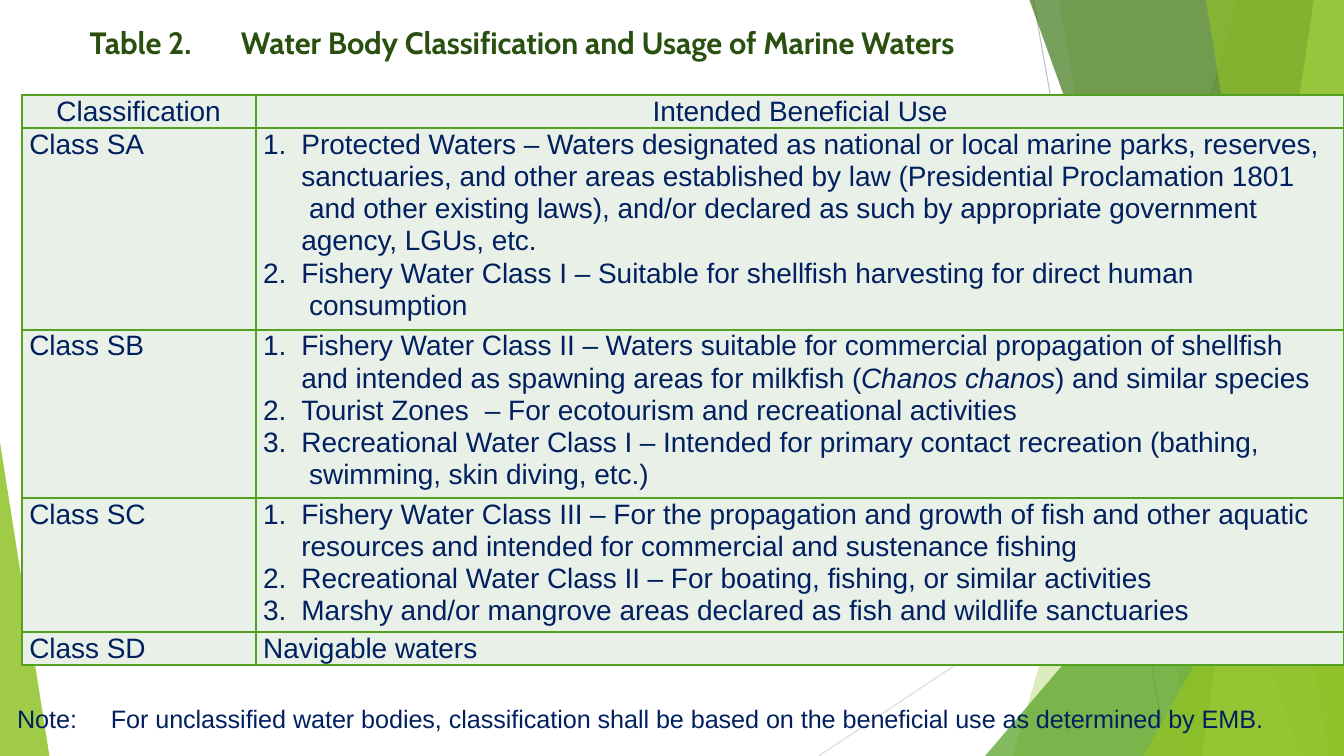
"""Build the slide on classification and usage of marine waters."""
from dataclasses import dataclass

from lxml import etree
from pptx import Presentation
from pptx.dml.color import RGBColor
from pptx.enum.shapes import MSO_CONNECTOR
from pptx.enum.text import PP_ALIGN
from pptx.oxml.ns import qn
from pptx.util import Inches, Pt

STRAIGHT = MSO_CONNECTOR.STRAIGHT
CENTER = PP_ALIGN.CENTER
WIDTH, HEIGHT = 13.33, 7.5


@dataclass(frozen=True)
class Theme:
    body: str = "002060"
    title: str = "2A5010"
    grid: str = "54A021"
    cell: str = "E9F0E8"
    body_font: str = "Arial"
    title_font: str = "Cabin"
    title_size: int = 22
    table_size: int = 20
    note_size: int = 18
    leading: int = 23
    grid_width: float = 1.5
    tracking: float = -0.05


THEME = Theme()

TITLE = "Table 2.\tWater Body Classification and Usage of Marine Waters"
HEADINGS = ("Classification", "Intended Beneficial Use")
CLASSES = [
    ("Class SA", [
        "Protected Waters – Waters designated as national or local marine parks, reserves,\n"
        "sanctuaries, and other areas established by law (Presidential Proclamation 1801\n"
        " and other existing laws), and/or declared as such by appropriate government\n"
        "agency, LGUs, etc.",
        "Fishery Water Class I – Suitable for shellfish harvesting for direct human\n"
        " consumption",
    ]),
    ("Class SB", [
        "Fishery Water Class II – Waters suitable for commercial propagation of shellfish\n"
        "and intended as spawning areas for milkfish (*Chanos chanos*) and similar species",
        "Tourist Zones\t– For ecotourism and recreational activities",
        "Recreational Water Class I – Intended for primary contact recreation (bathing,\n"
        " swimming, skin diving, etc.)",
    ]),
    ("Class SC", [
        "Fishery Water Class III – For the propagation and growth of fish and other aquatic\n"
        "resources and intended for commercial and sustenance fishing",
        "Recreational Water Class II – For boating, fishing, or similar activities",
        "Marshy and/or mangrove areas declared as fish and wildlife sanctuaries",
    ]),
    ("Class SD", ["Navigable waters"]),
]
NOTE = [
    ("Note:", 0.16, 0.63),
    ("For unclassified water bodies, classification shall be based on the "
     "beneficial use as determined by EMB.", 1.09, 11.53),
]

COLUMNS = (2.32, 10.79)
ROWS = (0.33, 2, 1.67, 1.33, 0.33)
TABLE_LEFT, TABLE_TOP = 0.22, 0.94
CELL_INDENT, LABEL_INDENT, ITEM_INDENT, NUMBER_HANG = 0.07, 0.34, 0.45, -0.38
TITLE_TAB, ZONES_TAB = 1.41, 2.27

RAYS = [
    ((10.25, 0), (11.58, HEIGHT), "BFBFBF"),
    ((WIDTH, 4.03), (8.12, HEIGHT), "D9D9D9"),
]
RIGHT_TOP, RIGHT_BOTTOM = (WIDTH, 0), (WIDTH, HEIGHT)
FACETS = [
    ([RIGHT_TOP, (12.28, 0), (10.04, HEIGHT), RIGHT_BOTTOM], "90C226", 30),
    ([RIGHT_TOP, (10.5, 0), (11.83, HEIGHT), RIGHT_BOTTOM], "90C226", 20),
    ([(WIDTH, 3.33), (9.77, HEIGHT), RIGHT_BOTTOM], "54A021", 72),
    ([RIGHT_TOP, (10.21, 0), (12.91, HEIGHT), RIGHT_BOTTOM], "3F7819", 70),
    ([RIGHT_TOP, (13.03, 0), (11.92, HEIGHT), RIGHT_BOTTOM], "C0E474", 70),
    ([RIGHT_TOP, (11.96, 0), (13.18, HEIGHT), RIGHT_BOTTOM], "90C226", 65),
    ([(WIDTH, 3.93), (11.34, HEIGHT), RIGHT_BOTTOM], "90C226", 80),
    ([(0, 4.39), (0, HEIGHT), (0.49, HEIGHT)], "90C226", 85),
]


def child(parent, tag, **attributes):
    element = etree.SubElement(parent, qn(tag))
    for key, value in attributes.items():
        element.set(key, str(value))
    return element


def write(paragraph, text, size=THEME.table_size, font=THEME.body_font,
          color=THEME.body, bold=False, align=None, indent=0, hang=0,
          leading=None, before=None, numbered=False, tabs=()):
    """Fill a paragraph; asterisks enclose italics, newlines break lines."""
    paragraph.alignment = align
    if leading:
        paragraph.line_spacing = Pt(leading)
    if before:
        paragraph.space_before = Pt(before)
    properties = paragraph._p.get_or_add_pPr()
    properties.set("marL", str(Inches(indent)))
    properties.set("indent", str(Inches(hang)))
    if numbered:
        child(properties, "a:buAutoNum", type="arabicPeriod")
    if tabs:
        stops = child(properties, "a:tabLst")
        for stop in tabs:
            child(stops, "a:tab", pos=Inches(stop), algn="l")
    for line_number, line in enumerate(text.split("\n")):
        if line_number:
            paragraph.add_line_break()
        for part_number, part in enumerate(line.split("*")):
            run = paragraph.add_run()
            run.text = part
            run.font.size, run.font.name = Pt(size), font
            run.font.bold, run.font.italic = bold, part_number % 2 == 1
            run.font.color.rgb = RGBColor.from_string(color)
            run._r.get_or_add_rPr().set("spc", str(round(THEME.tracking * 100)))


def add_label(slide, text, left, top, width, height, **style):
    frame = slide.shapes.add_textbox(*map(Inches, (left, top, width, height))).text_frame
    frame.word_wrap = True
    frame.margin_left = frame.margin_right = frame.margin_bottom = 0
    frame.margin_top = Inches(0.01)
    write(frame.paragraphs[0], text, indent=0.01, before=1, **style)


def add_backdrop(slide):
    for start, end, color in RAYS:
        ray = slide.shapes.add_connector(STRAIGHT, *map(Inches, start + end))
        ray.line.color.rgb = RGBColor.from_string(color)
        ray.line.width = Pt(0.75)
        child(ray._element.spPr, "a:effectLst")
    for corners, color, opacity in FACETS:
        points = [(Inches(x), Inches(y)) for x, y in corners]
        builder = slide.shapes.build_freeform(*points[0])
        builder.add_line_segments(points[1:], close=True)
        facet = builder.convert_to_shape()
        facet.shadow.inherit = False
        facet.line.fill.background()
        facet.fill.solid()
        facet.fill.fore_color.rgb = RGBColor.from_string(color)
        tint = facet._element.spPr.find(qn("a:solidFill"))[0]
        child(tint, "a:alpha", val=opacity * 1000)


def style_cell(cell):
    cell.margin_left = cell.margin_right = cell.margin_top = cell.margin_bottom = 0
    properties = cell._tc.get_or_add_tcPr()
    for side in ("a:lnL", "a:lnR", "a:lnT", "a:lnB"):
        border = child(properties, side, w=Pt(THEME.grid_width))
        child(child(border, "a:solidFill"), "a:srgbClr", val=THEME.grid)
    cell.fill.solid()
    cell.fill.fore_color.rgb = RGBColor.from_string(THEME.cell)


def add_classes(slide):
    table = slide.shapes.add_table(
        len(ROWS), len(COLUMNS), Inches(TABLE_LEFT), Inches(TABLE_TOP),
        Inches(sum(COLUMNS)), Inches(sum(ROWS))).table
    table.first_row = table.horz_banding = False
    for column, width in zip(table.columns, COLUMNS):
        column.width = Inches(width)
    for row, height in zip(table.rows, ROWS):
        row.height = Inches(height)
    for cell in table.iter_cells():
        style_cell(cell)

    def first(row, column):
        return table.cell(row, column).text_frame.paragraphs[0]

    write(first(0, 0), HEADINGS[0], indent=LABEL_INDENT, leading=THEME.leading)
    write(first(0, 1), HEADINGS[1], align=CENTER, leading=THEME.leading)
    for row, (name, uses) in enumerate(CLASSES, 1):
        write(first(row, 0), name, indent=CELL_INDENT, leading=THEME.leading)
        numbered = len(uses) > 1
        for position, use in enumerate(uses):
            frame = table.cell(row, 1).text_frame
            paragraph = frame.add_paragraph() if position else first(row, 1)
            write(paragraph, use, leading=THEME.leading, numbered=numbered,
                  indent=ITEM_INDENT if numbered else CELL_INDENT,
                  hang=NUMBER_HANG if numbered else 0,
                  tabs=(ITEM_INDENT, ZONES_TAB) if "\t" in use else ())


def main():
    deck = Presentation()
    deck.slide_width, deck.slide_height = Inches(WIDTH), Inches(HEIGHT)
    slide = deck.slides.add_slide(deck.slide_layouts[6])
    add_backdrop(slide)
    add_label(slide, TITLE, 0.88, 0.23, 9.77, 0.39, size=THEME.title_size,
              font=THEME.title_font, color=THEME.title, bold=True, tabs=(TITLE_TAB,))
    add_classes(slide)
    for text, left, width in NOTE:
        add_label(slide, text, left, 6.97, width, 0.33, size=THEME.note_size)
    deck.save("out.pptx")


if __name__ == "__main__":
    main()
